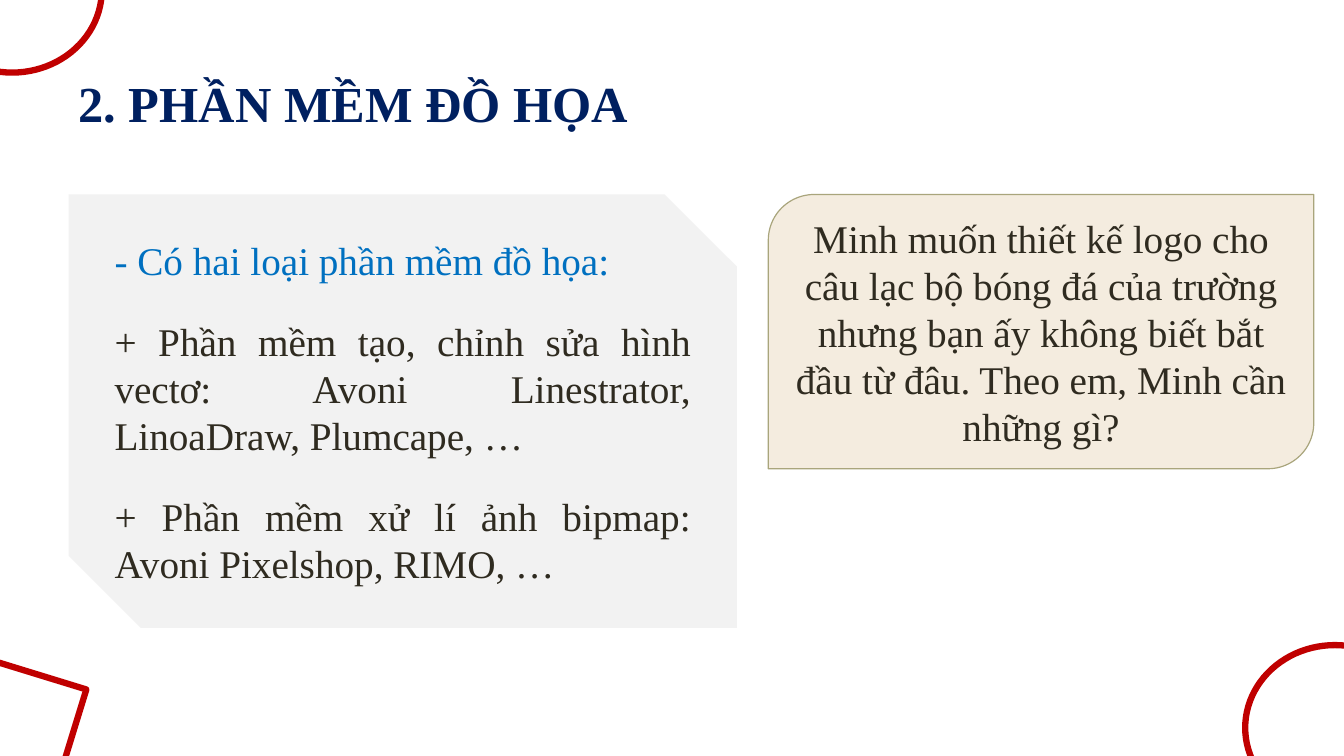
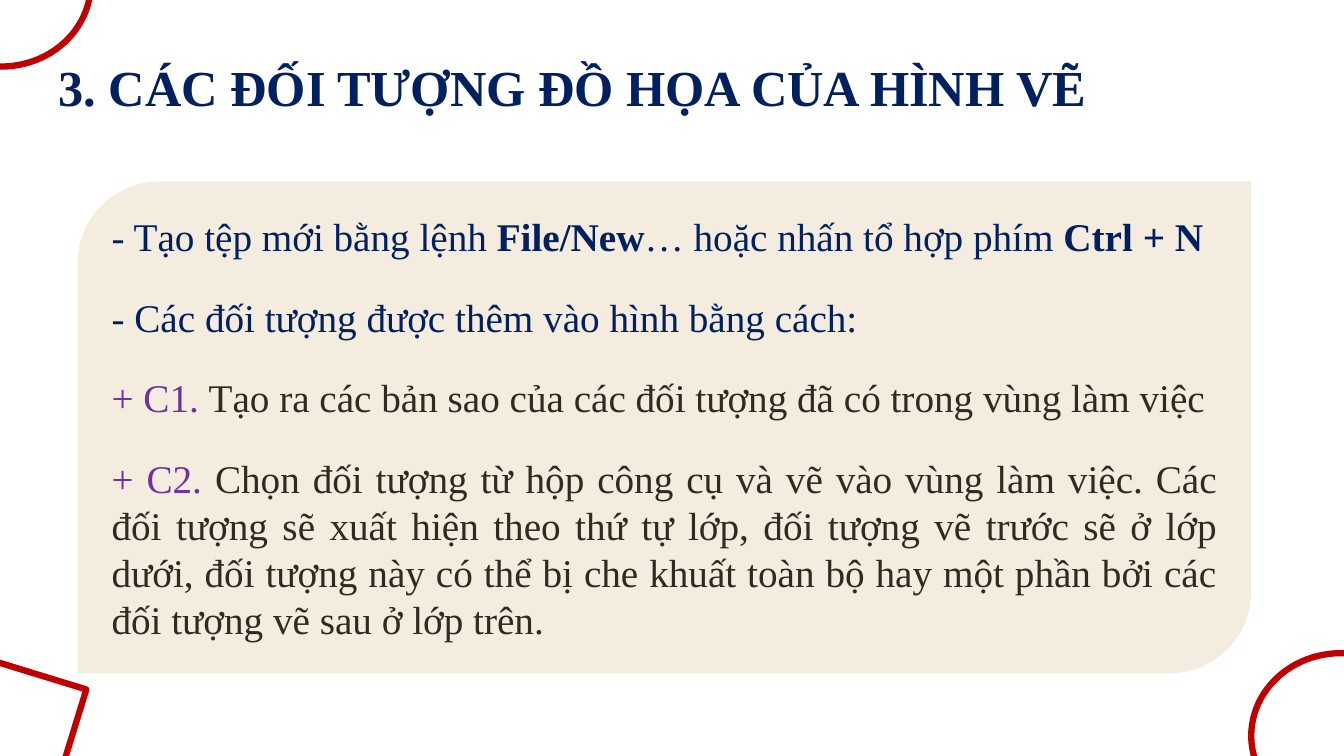
from dataclasses import dataclass

from pptx import Presentation
from pptx import util as u
from pptx.dml import color
from pptx.enum import shapes, text

FONT = "Times New Roman"
COLORS = {
    "white": "FFFFFF",
    "navy": "002060",
    "blue": "0070C0",
    "purple": "7030A0",
    "ink": "2F2B20",
    "red": "C00000",
    "gray": "F2F2F2",
    "cream": "F4ECDF",
    "olive": "A9A57C",
}
TITLE_SIZE = 36
BODY_SIZE = 28
CIRCLE = (1.78, 1.64)
CORNER_RECT = (-0.43, 6.6, 1.11, 1.19)
CORNER_ANGLE = 287.1


@dataclass(frozen=True)
class Run:
    text: str
    color: str = "ink"
    bold: bool = False


@dataclass(frozen=True)
class Panel:
    kind: shapes.MSO_SHAPE
    box: tuple[float, float, float, float]
    fill: str
    paragraphs: list[list[Run]]
    align: text.PP_ALIGN = text.PP_ALIGN.JUSTIFY
    gap: float = 12
    line: str | None = None


@dataclass(frozen=True)
class Page:
    title: str
    title_box: tuple[float, float, float, float]
    panels: list[Panel]
    circles: list[tuple[float, float]]


PAGES = [
    Page(
        "2. PHẦN MỀM ĐỒ HỌA",
        (0.68, 0.58, 5.71, 0.74),
        [
            Panel(
                shapes.MSO_SHAPE.SNIP_2_DIAG_RECTANGLE,
                (0.68, 1.93, 6.63, 4.3),
                "gray",
                [
                    [Run("- Có hai loại phần mềm đồ họa:", "blue")],
                    [Run("+ Phần mềm tạo, chỉnh sửa hình vectơ: "
                         "Avoni Linestrator, LinoaDraw, Plumcape, …")],
                    [Run("+ Phần mềm xử lí ảnh bipmap: Avoni Pixelshop, RIMO, …")],
                ],
            ),
            Panel(
                shapes.MSO_SHAPE.ROUND_2_DIAG_RECTANGLE,
                (7.62, 1.93, 5.41, 2.72),
                "cream",
                [[Run("Minh muốn thiết kế logo cho câu lạc bộ bóng đá của trường "
                      "nhưng bạn ấy không biết bắt đầu từ đâu. "
                      "Theo em, Minh cần những gì?")]],
                align=text.PP_ALIGN.CENTER,
                gap=0,
                line="olive",
            ),
        ],
        [(12.35, 6.4), (-0.77, -0.92)],
    ),
    Page(
        "3. CÁC ĐỐI TƯỢNG ĐỒ HỌA CỦA HÌNH VẼ",
        (0.48, 0.42, 10.57, 0.75),
        [
            Panel(
                shapes.MSO_SHAPE.ROUND_2_DIAG_RECTANGLE,
                (0.77, 1.8, 11.64, 4.88),
                "cream",
                [
                    [
                        Run("- Tạo tệp mới bằng lệnh ", "navy"),
                        Run("File/New", "navy", True),
                        Run("… hoặc nhấn tổ hợp phím ", "navy"),
                        Run("Ctrl + N", "navy", True),
                    ],
                    [Run("- Các đối tượng được thêm vào hình bằng cách:", "navy")],
                    [
                        Run("+ C1. ", "purple"),
                        Run("Tạo ra các bản sao của các đối tượng đã có "
                            "trong vùng làm việc"),
                    ],
                    [
                        Run("+ C2. ", "purple"),
                        Run("Chọn đối tượng từ hộp công cụ và vẽ vào vùng làm việc. "
                            "Các đối tượng sẽ xuất hiện theo thứ tự lớp, "
                            "đối tượng vẽ trước sẽ ở lớp dưới, đối tượng này có thể "
                            "bị che khuất toàn bộ hay một phần bởi các đối tượng "
                            "vẽ sau ở lớp trên."),
                    ],
                ],
            ),
        ],
        [(12.41, 6.48), (-0.88, -0.98)],
    ),
]


def rgb(name: str) -> color.RGBColor:
    return color.RGBColor.from_string(COLORS[name])


def inches(box: tuple[float, ...]) -> list[u.Length]:
    return [u.Inches(v) for v in box]


def write_runs(p, runs: list[Run], size: float) -> None:
    p.text = runs[0].text
    for run in runs[1:]:
        p.add_run().text = run.text
    for r, run in zip(p.runs, runs):
        r.font.name = FONT
        r.font.size = u.Pt(size)
        r.font.bold = run.bold
        r.font.color.rgb = rgb(run.color)


def add_shape(s, kind: shapes.MSO_SHAPE, box: tuple[float, ...],
              fill: str | None, line: str | None, width: float):
    sp = s.shapes.add_shape(kind, *inches(box))
    sp.shadow.inherit = False
    if fill:
        sp.fill.solid()
        sp.fill.fore_color.rgb = rgb(fill)
    else:
        sp.fill.background()
    if line:
        sp.line.color.rgb = rgb(line)
        sp.line.width = u.Pt(width)
    else:
        sp.line.fill.background()
    return sp


def add_title(s, page: Page) -> None:
    tf = s.shapes.add_textbox(*inches(page.title_box)).text_frame
    tf.word_wrap = False
    tf.auto_size = text.MSO_AUTO_SIZE.SHAPE_TO_FIT_TEXT
    p = tf.paragraphs[0]
    p.alignment = text.PP_ALIGN.JUSTIFY
    p.line_spacing = 1.15
    write_runs(p, [Run(page.title, "navy", True)], TITLE_SIZE)


def add_panel(s, panel: Panel) -> None:
    sp = add_shape(s, panel.kind, panel.box, panel.fill, panel.line, 0.85)
    tf = sp.text_frame
    tf.word_wrap = True
    tf.vertical_anchor = text.MSO_ANCHOR.MIDDLE
    for i, runs in enumerate(panel.paragraphs):
        p = tf.add_paragraph() if i else tf.paragraphs[0]
        p.alignment = panel.align
        p.space_before = p.space_after = u.Pt(panel.gap)
        write_runs(p, runs, BODY_SIZE)


def add_corners(s, page: Page) -> None:
    for corner in page.circles:
        add_shape(s, shapes.MSO_SHAPE.OVAL, corner + CIRCLE, "white", "red", 4.5)
    sp = add_shape(s, shapes.MSO_SHAPE.RECTANGLE, CORNER_RECT, None, "red", 4.5)
    sp.rotation = CORNER_ANGLE


def main() -> None:
    prs = Presentation()
    prs.slide_width, prs.slide_height = u.Inches(13.33), u.Inches(7.5)
    for page in PAGES:
        s = prs.slides.add_slide(prs.slide_layouts[6])
        add_title(s, page)
        for panel in page.panels:
            add_panel(s, panel)
        add_corners(s, page)
    prs.save("out.pptx")


if __name__ == "__main__":
    main()
